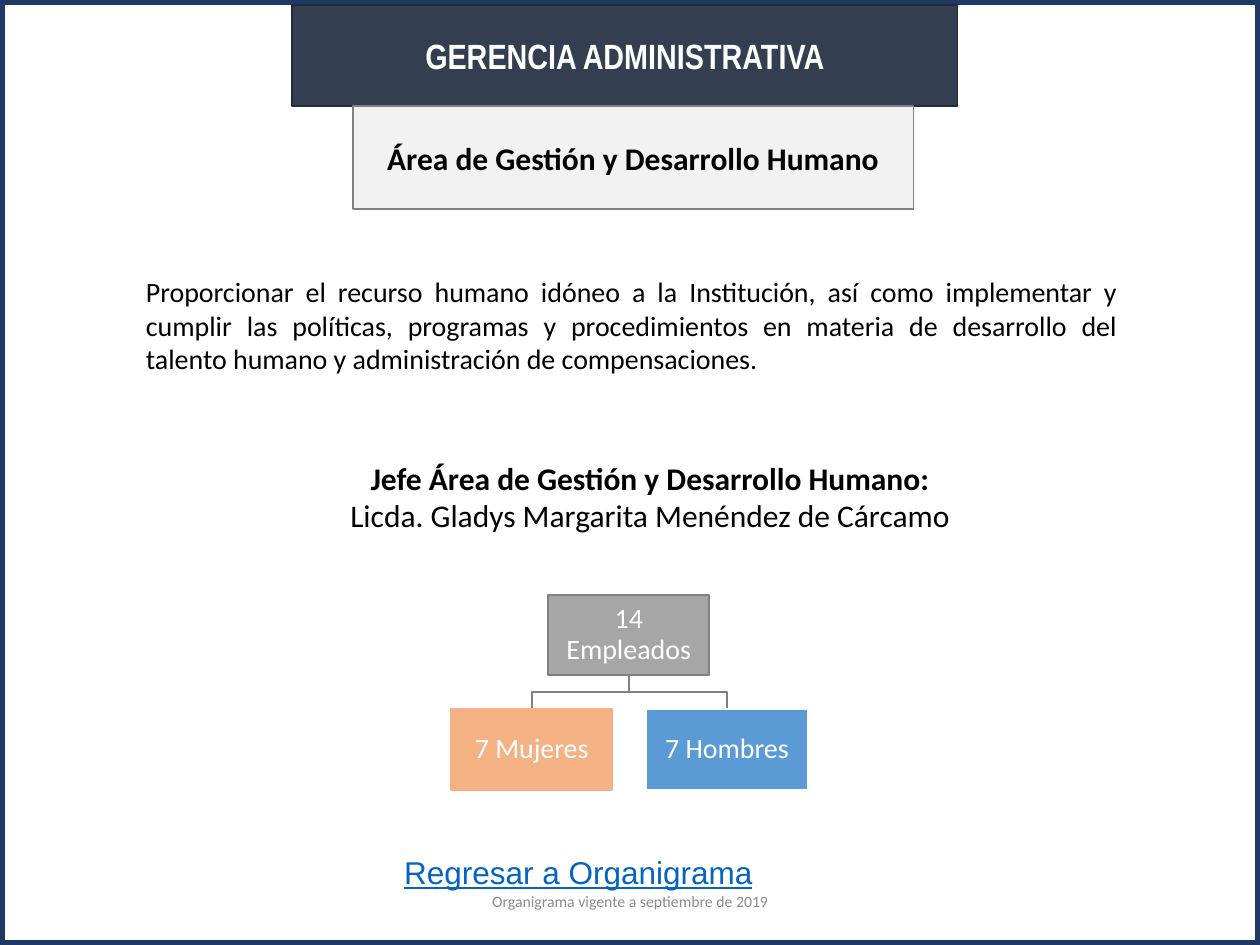
from pptx import Presentation
from pptx.dml.color import RGBColor
from pptx.enum.shapes import MSO_SHAPE
from pptx.enum.text import MSO_ANCHOR, PP_ALIGN
from pptx.util import Inches, Pt


def color(hex_value):
    return RGBColor.from_string(hex_value)


def write(paragraph, text, size, hex_value="000000", font="Calibri", bold=False,
          align=PP_ALIGN.CENTER):
    paragraph.alignment = align
    run = paragraph.add_run()
    run.text = text
    run.font.size = Pt(size)
    run.font.name = font
    run.font.bold = bold
    run.font.color.rgb = color(hex_value)
    return run


presentation = Presentation()
presentation.slide_width = Inches(10)
presentation.slide_height = Inches(7.5)
slide = presentation.slides.add_slide(presentation.slide_layouts[6])
shapes = slide.shapes

# Slide frame
frame = shapes.add_shape(MSO_SHAPE.RECTANGLE, 0, 0, Inches(10), Inches(7.5))
frame.shadow.inherit = False
frame.fill.background()
frame.line.color.rgb = color("203864")
frame.line.width = Pt(6)

# Branches from the total to each group
box_width, box_height = 1.28, 0.64
total_left, total_top = 4.35, 4.72
group_lefts, group_top = (3.58, 5.13), 5.63
stem_x = total_left + box_width / 2
stem_top = total_top + box_height
middle_y = (stem_top + group_top) / 2
for group_left in group_lefts:
    group_x = group_left + box_width / 2
    builder = shapes.build_freeform(Inches(stem_x), Inches(stem_top))
    builder.add_line_segments(
        [(Inches(x), Inches(y)) for x, y in
         [(stem_x, middle_y), (group_x, middle_y), (group_x, group_top)]],
        close=False)
    branch = builder.convert_to_shape()
    branch.shadow.inherit = False
    branch.fill.background()
    branch.line.color.rgb = color("808080")
    branch.line.width = Pt(1)

# Heading boxes and staff chart boxes
boxes = [
    # left, top, width, height, fill, line, text, size, text color, font, bold
    (2.32, 0.04, 5.28, 0.8, "333F50", "222A35",
     "GERENCIA ADMINISTRATIVA", 20, "FFFFFF", "Arial Narrow", True),
    (2.8, 0.84, 4.45, 0.82, "F2F2F2", "808080",
     "Área de Gestión y Desarrollo Humano", 18, "000000", "Calibri", True),
    (total_left, total_top, box_width, box_height, "A6A6A6", "808080",
     "14 Empleados", 16, "FFFFFF", "Calibri", False),
    (group_lefts[0], group_top, box_width, box_height, "F4B183", "F4B183",
     "7 Mujeres", 16, "FFFFFF", "Calibri", False),
    (group_lefts[1], group_top, box_width, box_height, "5B9BD5", "FFFFFF",
     "7 Hombres", 16, "FFFFFF", "Calibri", False),
]
for left, top, width, height, fill, line, text, size, ink, font, bold in boxes:
    box = shapes.add_shape(MSO_SHAPE.RECTANGLE, Inches(left), Inches(top),
                           Inches(width), Inches(height))
    box.shadow.inherit = False
    box.fill.solid()
    box.fill.fore_color.rgb = color(fill)
    box.line.color.rgb = color(line)
    box.line.width = Pt(1)
    frame_text = box.text_frame
    frame_text.word_wrap = True
    frame_text.vertical_anchor = MSO_ANCHOR.MIDDLE
    paragraph = frame_text.paragraphs[0]
    write(paragraph, text, size, ink, font, bold)
    if width == box_width:
        frame_text.margin_left = frame_text.margin_right = Inches(0.01)
        frame_text.margin_top = frame_text.margin_bottom = Inches(0.01)
        paragraph.line_spacing = 0.9

# Purpose of the area
purpose = shapes.add_textbox(Inches(1.06), Inches(2.13), Inches(7.91), Inches(0.91))
purpose.text_frame.word_wrap = True
write(purpose.text_frame.paragraphs[0],
      "Proporcionar el recurso humano idóneo a la Institución, así como "
      "implementar y cumplir las políticas, programas y procedimientos en "
      "materia de desarrollo del talento humano y administración de "
      "compensaciones.", 16, align=PP_ALIGN.JUSTIFY)

# Head of the area
head = shapes.add_textbox(Inches(2.56), Inches(3.59), Inches(5.2), Inches(1.01))
head.text_frame.word_wrap = True
write(head.text_frame.paragraphs[0],
      "Jefe Área de Gestión y Desarrollo Humano:", 18, bold=True)
write(head.text_frame.add_paragraph(),
      "Licda. Gladys Margarita Menéndez de Cárcamo", 18)

# Return label
back = shapes.add_textbox(Inches(3.11), Inches(6.72), Inches(3.27), Inches(0.4))
back.text_frame.word_wrap = True
back_run = write(back.text_frame.paragraphs[0], "Regresar a Organigrama", 18,
                 "0563C1", "Arial", align=PP_ALIGN.LEFT)
back_run.font.underline = True

# Footer
footer = shapes.add_textbox(Inches(3.31), Inches(6.95), Inches(3.38), Inches(0.4))
footer.text_frame.word_wrap = True
footer.text_frame.vertical_anchor = MSO_ANCHOR.MIDDLE
write(footer.text_frame.paragraphs[0],
      "Organigrama vigente a septiembre de 2019", 9, "8C8C8C")

presentation.save("out.pptx")
